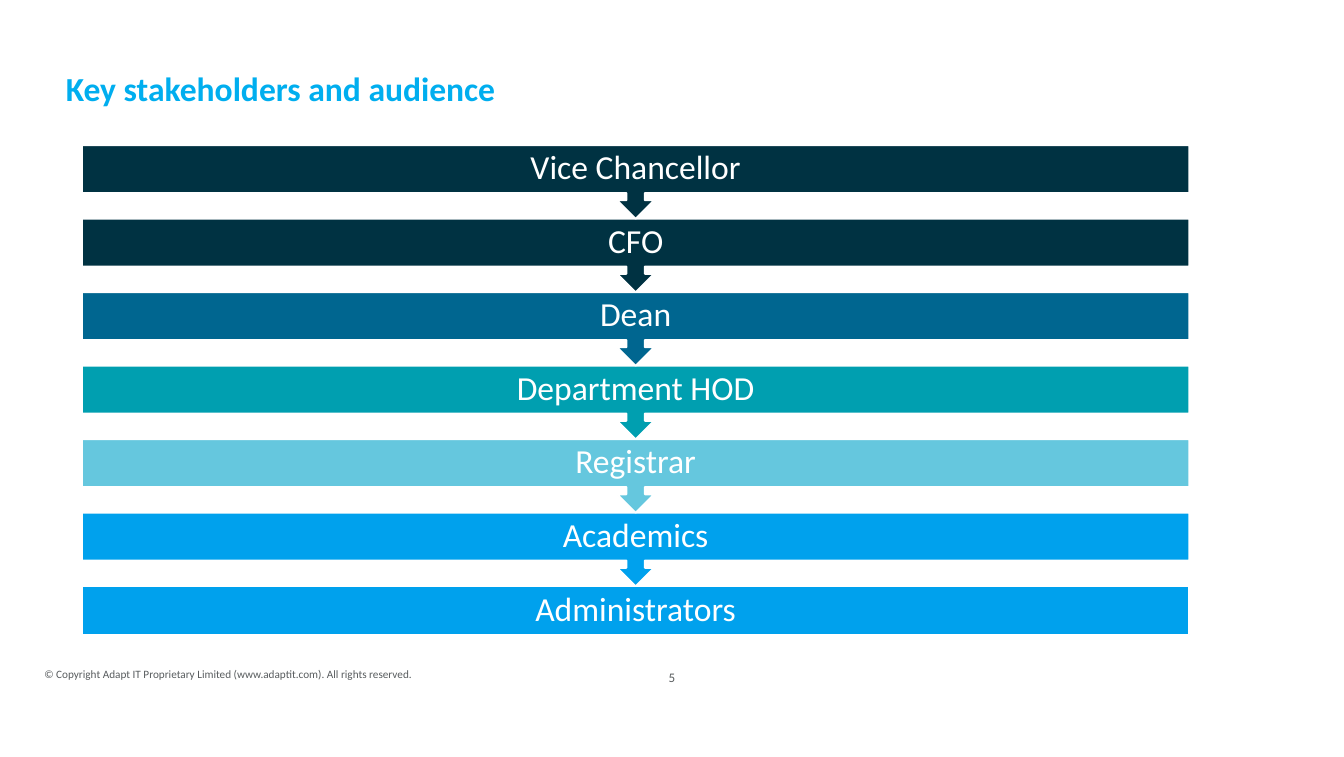
from pptx import Presentation
from pptx.dml.color import RGBColor
from pptx.enum.shapes import MSO_SHAPE
from pptx.enum.text import MSO_ANCHOR, PP_ALIGN
from pptx.util import Inches, Pt

COLORS = {
    "white": "FFFFFF", "title": "00AEEF", "footer": "585C5E", "navy": "003242",
    "blue": "006690", "teal": "009FB0", "aqua": "65C7DE", "sky": "00A1ED",
}
STAKEHOLDERS = [
    ("Vice Chancellor", "navy"), ("CFO", "navy"), ("Dean", "blue"),
    ("Department HOD", "teal"), ("Registrar", "aqua"),
    ("Academics", "sky"), ("Administrators", "sky"),
]
CHAIN_LEFT, CHAIN_TOP, CHAIN_WIDTH = 0.61, 1.08, 8.24
LAST_TOP, BAR_HEIGHT = 4.36, 0.36
ROW_PITCH = (LAST_TOP - CHAIN_TOP) / (len(STAKEHOLDERS) - 1)


class SlideBuilder:
    font_name = "Calibri"

    def __init__(self, slide):
        self.slide = slide

    def color(self, name):
        return RGBColor.from_string(COLORS[name])

    def set_text(self, shape, text, size, color, align=PP_ALIGN.LEFT, bold=False, spacing=None):
        frame = shape.text_frame
        frame.word_wrap = True
        frame.vertical_anchor = MSO_ANCHOR.MIDDLE
        frame.margin_left = frame.margin_right = 0
        frame.margin_top = frame.margin_bottom = 0
        frame.text = text
        paragraph = frame.paragraphs[0]
        paragraph.alignment = align
        paragraph.line_spacing = spacing
        font = paragraph.font
        font.name, font.size, font.bold = self.font_name, Pt(size), bold
        font.color.rgb = self.color(color)

    def title(self, text, *box):
        heading = self.slide.shapes.title
        heading.left, heading.top, heading.width, heading.height = map(Inches, box)
        self.set_text(heading, text, 18, "title", bold=True, spacing=Pt(22.6))

    def footer(self, text, size, *box, align=PP_ALIGN.LEFT):
        note = self.slide.shapes.add_textbox(*map(Inches, box))
        self.set_text(note, text, size, "footer", align)

    def stakeholder(self, row, name, fill, is_last):
        """Adds one bar of the chain; all but the last point down to the next."""
        kind = MSO_SHAPE.RECTANGLE if is_last else MSO_SHAPE.DOWN_ARROW_CALLOUT
        box = (CHAIN_LEFT, CHAIN_TOP + row * ROW_PITCH, CHAIN_WIDTH,
               BAR_HEIGHT if is_last else ROW_PITCH)
        bar = self.slide.shapes.add_shape(kind, *map(Inches, box))
        bar.shadow.inherit = False
        bar.fill.solid()
        bar.fill.fore_color.rgb = self.color(fill)
        bar.line.color.rgb = self.color("white")
        bar.line.width = Pt(1)
        self.set_text(bar, name, 18, "white", PP_ALIGN.CENTER, spacing=0.9)


def main():
    deck = Presentation()
    deck.slide_width, deck.slide_height = Inches(10), Inches(5.63)
    title_only = deck.slide_layouts[5]
    builder = SlideBuilder(deck.slides.add_slide(title_only))

    builder.footer(
        "© Copyright Adapt IT Proprietary Limited (www.adaptit.com). All rights reserved.",
        6, 0.33, 4.78, 3.45, 0.46)
    builder.footer("5", 7, 4.31, 4.78, 1.38, 0.52, align=PP_ALIGN.CENTER)
    builder.title("Key stakeholders and audience", 0.49, 0.38, 9.13, 0.53)

    # Bottom row first, so each arrow tip lies over the bar below it
    last = len(STAKEHOLDERS) - 1
    for row, (name, fill) in reversed(list(enumerate(STAKEHOLDERS))):
        builder.stakeholder(row, name, fill, row == last)

    deck.save("out.pptx")


if __name__ == "__main__":
    main()
